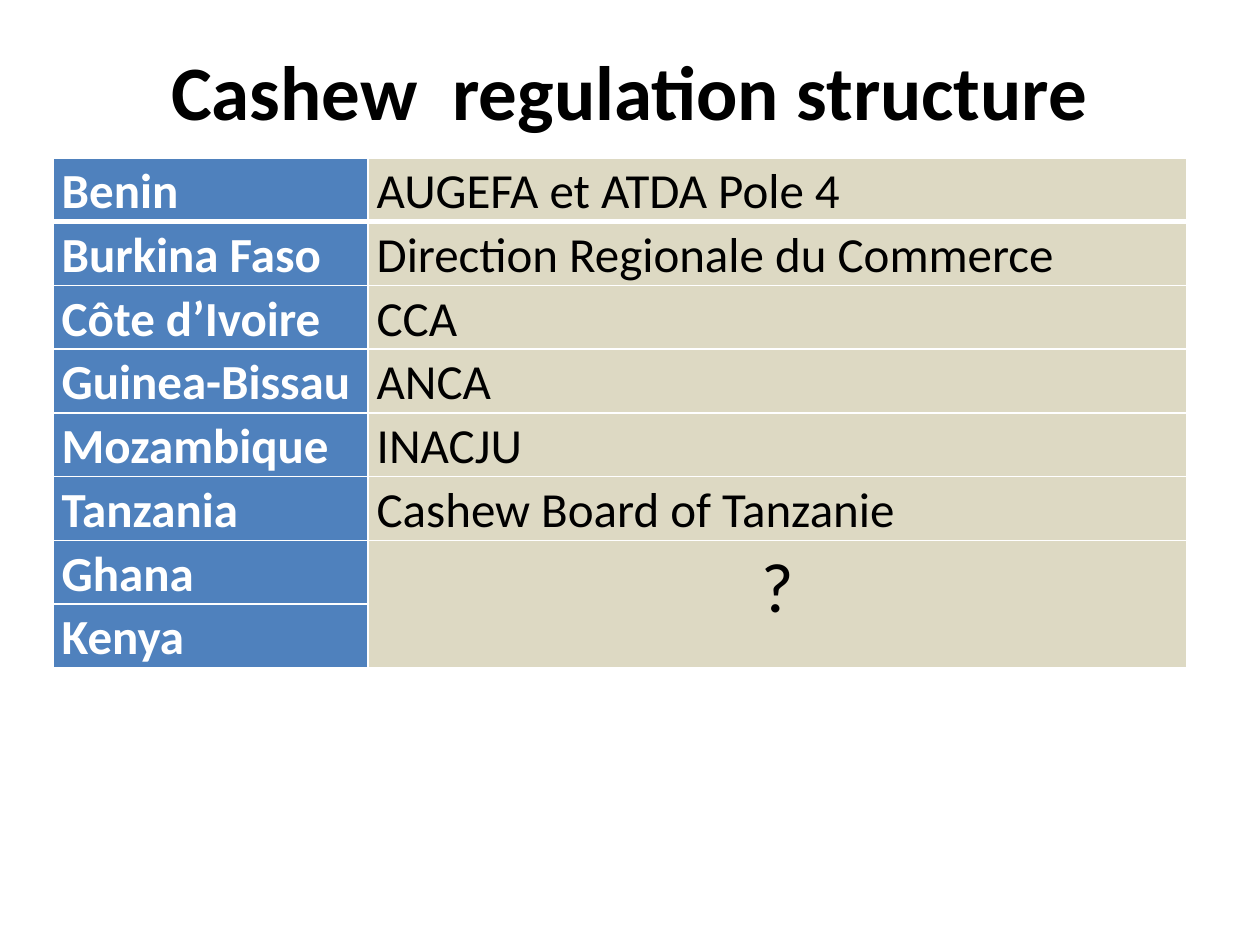
import pptx
import pptx.dml.color
import pptx.enum.text
import pptx.util
from lxml import etree

COLORS = {"white": "FFFFFF", "black": "000000", "country": "4F81BD", "body": "DDD9C3"}
DRAWING = "http://schemas.openxmlformats.org/drawingml/2006/main"
ALIGN = pptx.enum.text.PP_ALIGN
ANCHOR = pptx.enum.text.MSO_ANCHOR

WIDTH, HEIGHT = pptx.util.Inches(10), pptx.util.Inches(7.5)
# Boxes are left, top, width, height as shares of the slide
TITLE_BOX = (0.05, 0.01, 0.9, 0.17)
TABLE_BOX = (0.042, 0.167, 0.9, 0.54)
COUNTRY_SHARE = 2.5 / 9

REGULATORS = [
    ("Benin", "AUGEFA et ATDA Pole 4"),
    ("Burkina Faso", "Direction Regionale du Commerce"),
    ("Côte d’Ivoire", "CCA"),
    ("Guinea-Bissau", "ANCA"),
    ("Mozambique", "INACJU"),
    ("Tanzania", "Cashew Board of Tanzanie"),
    ("Ghana", "?"),
    ("Kenya", ""),
]


def set_all(target, values):
    for name, value in values.items():
        setattr(target, name, value)


def to_slide(box):
    return [int(share * side) for share, side in zip(box, (WIDTH, HEIGHT) * 2)]


def write(frame, text, size, color, bold, align=ALIGN.LEFT, spacing=1.0):
    para = frame.paragraphs[0]
    set_all(para, {"alignment": align, "line_spacing": spacing})
    span = para.add_run()
    span.text = text
    set_all(span.font, {"name": "Calibri", "size": pptx.util.Pt(size), "bold": bold})
    span.font.color.rgb = pptx.dml.color.RGBColor.from_string(COLORS[color])


def add_borders(cell, widths):
    properties = cell._tc.get_or_add_tcPr()
    for side, points in widths.items():
        line = etree.SubElement(properties, f"{{{DRAWING}}}ln{side}", w=str(pptx.util.Pt(points)))
        fill = etree.SubElement(line, f"{{{DRAWING}}}solidFill")
        etree.SubElement(fill, f"{{{DRAWING}}}srgbClr", val=COLORS["white"])


def add_title(page, box):
    frame = page.shapes.add_textbox(*to_slide(box)).text_frame
    set_all(frame, {"word_wrap": True, "vertical_anchor": ANCHOR.MIDDLE})
    write(frame, "Cashew  regulation structure", 44, "black", True, ALIGN.CENTER)


def add_regulator_table(page, box):
    left, top, width, height = to_slide(box)
    count = len(REGULATORS)
    table = page.shapes.add_table(count, 2, left, top, width, height).table
    table.columns[0].width = int(width * COUNTRY_SHARE)
    table.columns[1].width = width - table.columns[0].width
    # The last two countries share one open answer
    table.cell(count - 2, 1).merge(table.cell(count - 1, 1))

    margin = pptx.util.Inches(0.07)
    cell_format = {"margin_left": margin, "margin_right": margin,
                   "margin_top": 0, "margin_bottom": 0}
    for row, texts in enumerate(REGULATORS):
        for column, text in enumerate(texts):
            cell = table.cell(row, column)
            set_all(cell, cell_format)
            # A heavier rule runs below the first row
            add_borders(cell, {"L": 1, "R": 1, "T": 3 if row == 1 else 1,
                               "B": 3 if row == 0 else 1})
            is_country = column == 0
            cell.fill.solid()
            cell.fill.fore_color.rgb = pptx.dml.color.RGBColor.from_string(
                COLORS["country" if is_country else "body"])
            if text:
                is_open = text == "?"
                write(cell.text_frame, text, 40 if is_open else 28,
                      "white" if is_country else "black", is_country,
                      ALIGN.CENTER if is_open else ALIGN.LEFT, 1.07)


def main():
    deck = pptx.Presentation()
    set_all(deck, {"slide_width": WIDTH, "slide_height": HEIGHT})
    page = deck.slides.add_slide(deck.slide_layouts[6])
    add_title(page, TITLE_BOX)
    add_regulator_table(page, TABLE_BOX)
    deck.save("out.pptx")


if __name__ == "__main__":
    main()
